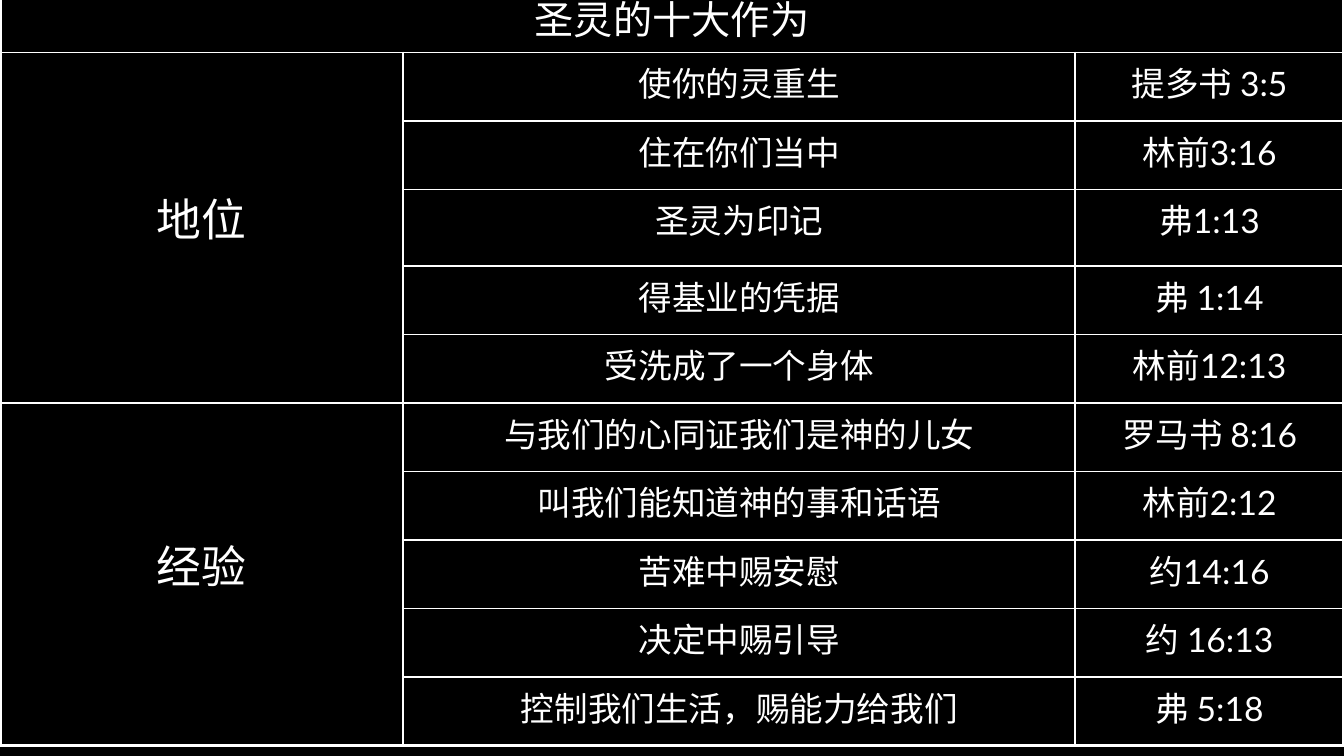
from pptx import Presentation
from pptx.dml.color import RGBColor
from pptx.enum.text import MSO_ANCHOR as Anchor, PP_ALIGN as Align
from pptx.oxml import parse_xml
from pptx.oxml.ns import nsdecls
from pptx.util import Inches, Pt

# Content
TITLE = "圣灵的十大作为"
GROUPS = [
    ("地位", [
        ("使你的灵重生", "提多书 3:5"),
        ("住在你们当中", "林前3:16"),
        ("圣灵为印记", "弗1:13"),
        ("得基业的凭据", "弗 1:14"),
        ("受洗成了一个身体", "林前12:13"),
    ]),
    ("经验", [
        ("与我们的心同证我们是神的儿女", "罗马书 8:16"),
        ("叫我们能知道神的事和话语", "林前2:12"),
        ("苦难中赐安慰", "约14:16"),
        ("决定中赐引导", "约 16:13"),
        ("控制我们生活，赐能力给我们", "弗 5:18"),
    ]),
]

# Style and grid
COLORS = {"background": "000000", "text": "FFFFFF", "line": "FFFFFF"}
FONT = "Lato"
SIZES = {"title": 21, "group": 24, "body": 18}
INNER_LINE, OUTER_LINE = 1, 2.25
WIDTH = 10
HEIGHT = WIDTH * 9 / 16
TABLE_TOP = -0.12
COLUMN_SHARES = (0.3, 0.5, 0.2)
ROW_HEIGHT, TALL_ROW_HEIGHT, TALL_ROW = 0.51, 0.57, 3
ROW_COUNT = 1 + sum(len(works) for _, works in GROUPS)
COLUMN_COUNT = len(COLUMN_SHARES)


def write(cell, text, size):
    cell.text = text
    cell.margin_left = cell.margin_right = Inches(0.1)
    cell.margin_top = cell.margin_bottom = Inches(0.04)
    paragraph = cell.text_frame.paragraphs[0]
    paragraph.alignment = Align.CENTER
    paragraph.space_before = Pt(round(size * 0.2, 1))
    paragraph.font.size = Pt(size)
    paragraph.font.name = FONT
    paragraph.font.color.rgb = RGBColor.from_string(COLORS["text"])


def draw_borders(cell, row, column):
    """Thick lines on the rim of the table, thin lines inside."""
    rims = {"lnL": column == 0, "lnR": column + cell.span_width == COLUMN_COUNT,
            "lnT": row == 0, "lnB": row + cell.span_height == ROW_COUNT}
    properties = cell._tc.get_or_add_tcPr()
    for position, (tag, on_rim) in enumerate(rims.items()):
        width = Pt(OUTER_LINE if on_rim else INNER_LINE)
        properties.insert(position, parse_xml(
            f'<a:{tag} {nsdecls("a")} w="{width}"><a:solidFill>'
            f'<a:srgbClr val="{COLORS["line"]}"/></a:solidFill></a:{tag}>'))


# Slide
presentation = Presentation()
presentation.slide_width, presentation.slide_height = Inches(WIDTH), Inches(HEIGHT)
slide = presentation.slides.add_slide(presentation.slide_layouts[6])
slide.background.fill.solid()
slide.background.fill.fore_color.rgb = RGBColor.from_string(COLORS["background"])

# Table grid
table_height = ROW_HEIGHT * (ROW_COUNT - 1) + TALL_ROW_HEIGHT
table = slide.shapes.add_table(ROW_COUNT, COLUMN_COUNT, 0, Inches(TABLE_TOP),
                               Inches(WIDTH), Inches(table_height)).table
table.first_row = table.horz_banding = False
for column, share in zip(table.columns, COLUMN_SHARES):
    column.width = Inches(WIDTH * share)
for index, row in enumerate(table.rows):
    row.height = Inches(TALL_ROW_HEIGHT if index == TALL_ROW else ROW_HEIGHT)

# Title row
table.cell(0, 0).merge(table.cell(0, COLUMN_COUNT - 1))
write(table.cell(0, 0), TITLE, SIZES["title"])

# Groups with their works and references
first = 1
for label, works in GROUPS:
    group_cell = table.cell(first, 0)
    group_cell.merge(table.cell(first + len(works) - 1, 0))
    write(group_cell, label, SIZES["group"])
    group_cell.vertical_anchor = Anchor.MIDDLE
    group_cell.margin_bottom = Inches(0.2)
    for index, work in enumerate(works, first):
        for column, text in enumerate(work, 1):
            write(table.cell(index, column), text, SIZES["body"])
    first += len(works)

# Fills and borders, once the merged areas are known
for row in range(ROW_COUNT):
    for column in range(COLUMN_COUNT):
        cell = table.cell(row, column)
        cell.fill.background()
        draw_borders(cell, row, column)

presentation.save("out.pptx")
